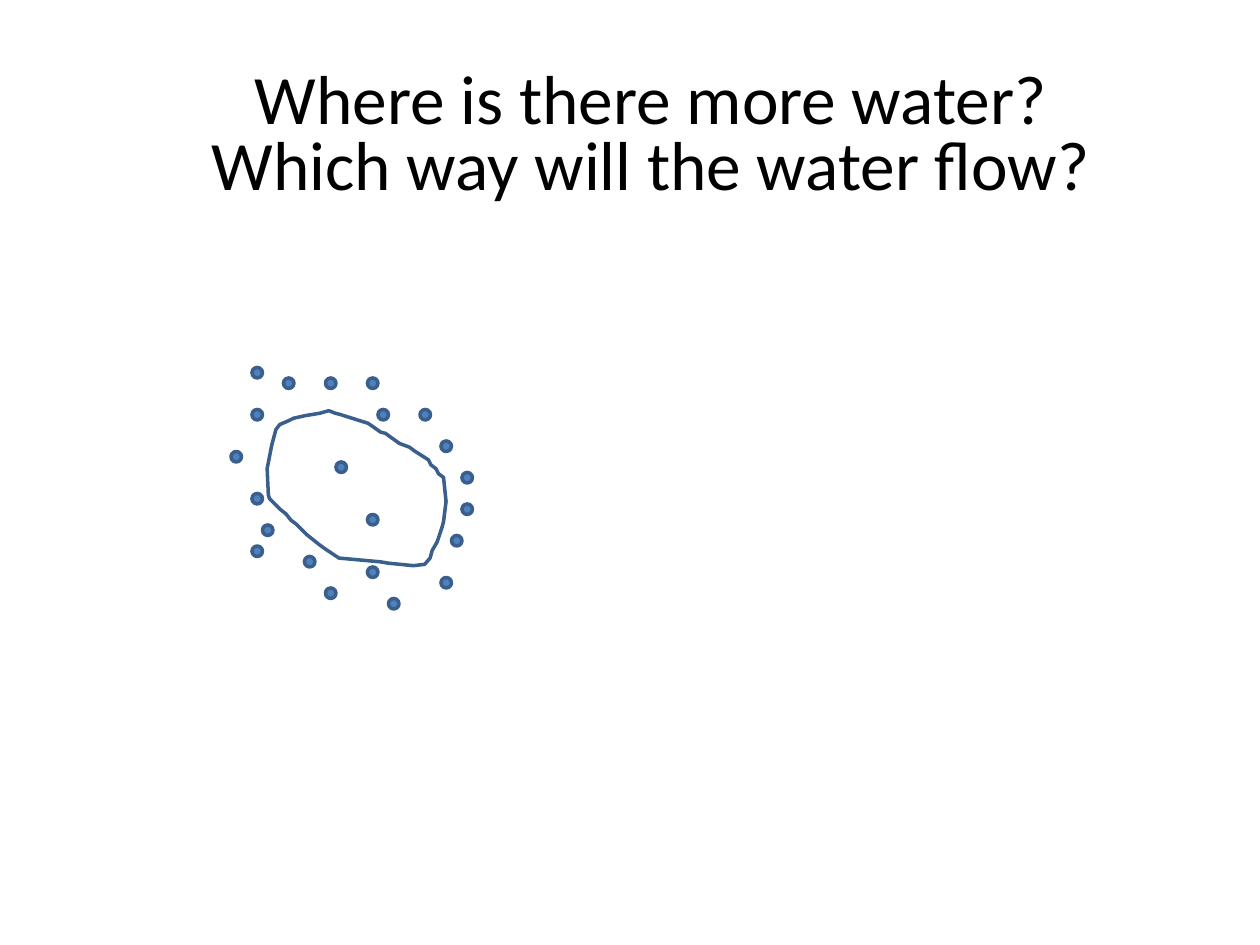
from dataclasses import dataclass
from typing import NamedTuple

from pptx import Presentation
from pptx.dml.color import RGBColor
from pptx.enum.text import MSO_ANCHOR, MSO_AUTO_SIZE, PP_ALIGN
from pptx.enum.shapes import MSO_SHAPE
from pptx.shapes.autoshape import Shape
from pptx.shapes.shapetree import GroupShapes
from pptx.util import Emu, Pt

EMU_PER_PX = 3048
GRID_PX = 25


@dataclass(frozen=True)
class Theme:
    font: str = "Calibri"
    title_size: float = 39.6
    title_spacing: float = 0.8
    line_width: int = 2
    text: RGBColor = RGBColor(0x00, 0x00, 0x00)
    cell: RGBColor = RGBColor(0xFF, 0xFF, 0xFF)
    water: RGBColor = RGBColor(0x4F, 0x81, 0xBD)
    outline: RGBColor = RGBColor(0x3A, 0x5F, 0x8C)


class Molecule(NamedTuple):
    column: int
    row: int


THEME = Theme()

MEMBRANE = [
    (762, 984), (726, 990), (699, 996), (687, 1002), (666, 1011), (657, 1023),
    (647, 1060), (639, 1101), (636, 1116), (639, 1179), (642, 1188), (666, 1212),
    (681, 1224), (693, 1239), (705, 1248), (729, 1272), (759, 1296), (771, 1305),
    (807, 1329), (906, 1338), (924, 1341), (984, 1347), (1011, 1344), (1024, 1329),
    (1029, 1311), (1041, 1290), (1053, 1254), (1056, 1242), (1062, 1194), (1056, 1137),
    (1044, 1128), (1038, 1116), (1026, 1107), (1020, 1095), (987, 1074), (975, 1065),
    (951, 1056), (930, 1041), (918, 1032), (906, 1029), (885, 1014), (876, 1008),
    (819, 990), (810, 987), (798, 984), (783, 978),
]

INSIDE = [Molecule(32, 44), Molecule(35, 49)]
OUTSIDE = [
    Molecule(24, 35), Molecule(31, 56), Molecule(37, 57), Molecule(29, 53),
    Molecule(42, 55), Molecule(43, 51), Molecule(25, 50), Molecule(24, 47),
    Molecule(35, 54), Molecule(44, 48), Molecule(24, 52), Molecule(22, 43),
    Molecule(36, 39), Molecule(42, 42), Molecule(24, 39), Molecule(44, 45),
    Molecule(35, 36), Molecule(27, 36), Molecule(31, 36), Molecule(40, 39),
]


def px(length: int) -> Emu:
    """Turn a length in px into EMU."""
    return Emu(length * EMU_PER_PX)


def style_shape(shape: Shape, fill: RGBColor) -> None:
    """Give a shape its fill and the common outline."""
    shape.shadow.inherit = False
    shape.fill.solid()
    shape.fill.fore_color.rgb = fill
    shape.line.color.rgb = THEME.outline
    shape.line.width = Pt(THEME.line_width)


def draw_membrane(shapes: GroupShapes) -> None:
    """Draw the closed outline of the cell."""
    start, *points = MEMBRANE
    builder = shapes.build_freeform(*start, scale=EMU_PER_PX)
    builder.add_line_segments(points, close=True)
    style_shape(builder.convert_to_shape(), THEME.cell)


def draw_molecule(shapes: GroupShapes, molecule: Molecule) -> None:
    """Draw one water molecule filling its grid square."""
    shape = shapes.add_shape(
        MSO_SHAPE.OVAL,
        px(molecule.column * GRID_PX),
        px(molecule.row * GRID_PX),
        px(GRID_PX),
        px(GRID_PX),
    )
    style_shape(shape, THEME.water)


def write_title(title: Shape, text: str) -> None:
    """Place and format the slide title."""
    title.left, title.top, title.width, title.height = map(px, (200, 140, 2700, 375))
    text_frame = title.text_frame
    text_frame.text = text
    text_frame.word_wrap = True
    text_frame.auto_size = MSO_AUTO_SIZE.NONE
    text_frame.vertical_anchor = MSO_ANCHOR.MIDDLE
    paragraph = text_frame.paragraphs[0]
    paragraph.alignment = PP_ALIGN.CENTER
    paragraph.line_spacing = THEME.title_spacing
    for run in paragraph.runs:
        run.font.name = THEME.font
        run.font.size = Pt(THEME.title_size)
        run.font.color.rgb = THEME.text


def main() -> None:
    """Build the slide and save it."""
    presentation = Presentation()
    presentation.slide_width, presentation.slide_height = px(3000), px(2250)
    slide = presentation.slides.add_slide(presentation.slide_layouts[5])
    write_title(
        slide.shapes.title,
        "Where is there more water?\vWhich way will the water flow?",
    )
    cell_group = slide.shapes.add_group_shape()
    draw_membrane(cell_group.shapes)
    for molecule in INSIDE + OUTSIDE:
        draw_molecule(cell_group.shapes, molecule)
    presentation.save("out.pptx")


if __name__ == "__main__":
    main()
